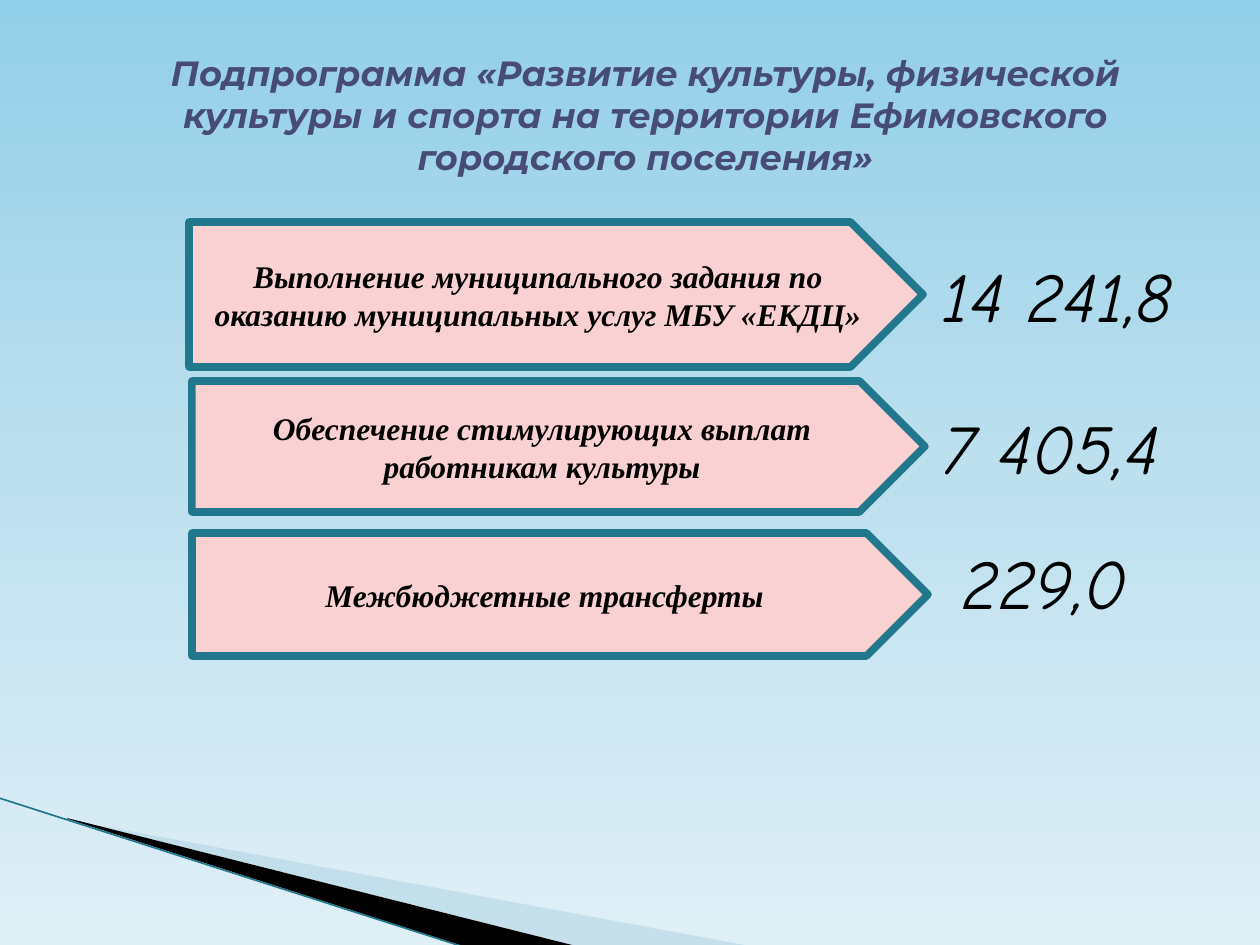
from copy import deepcopy

from lxml import etree
from pptx import Presentation
from pptx import util as u
from pptx.dml.color import RGBColor
from pptx.enum import shapes, text
from pptx.oxml.ns import qn

PX = 914400 / 126
SLIDE_SIZE = (1260, 945)

TITLE = ("Подпрограмма «Развитие культуры, физической культуры и спорта "
         "на территории Ефимовского городского поселения»")
TITLE_BOX = (105, 45, 1081, 140)

# (activity, arrow box, amount, amount box)
ACTIVITIES = [
    ("Выполнение муниципального задания по оказанию муниципальных услуг МБУ «ЕКДЦ»",
     (189, 222, 734, 145), "14 241,8", (930, 246, 329, 97)),
    ("Обеспечение стимулирующих выплат работникам культуры",
     (192, 381, 733, 131), "7 405,4", (930, 398, 289, 97)),
    ("Межбюджетные трансферты",
     (192, 533, 736, 123), "229,0", (950, 533, 248, 97)),
]

SKY = [(0, "92CFE8"), (0.5, "BDE0EF"), (1, "DFEFF6")]
PINK, TEAL, BLACK, VIOLET = "F9D1D3", "21788D", "000000", "474B78"

# (corner points, fill, opacity in percent)
WEDGES = [
    ([(69, 820), (750, 946), (575, 946), (69, 819)], "A0CBDC", 40),
    ([(67, 818), (576, 946), (469, 948), (68, 819)], BLACK, 100),
]
EDGE = (-1, 798, 467, 948)


def px(*lengths):
    return [round(length * PX) for length in lengths]


def rgb(value):
    return RGBColor.from_string(value)


def write(shape, content, *, font, size, color=BLACK, bold=False,
          align=text.PP_ALIGN.LEFT, anchor=text.MSO_ANCHOR.TOP):
    frame = shape.text_frame
    frame.word_wrap = True
    frame.auto_size = text.MSO_AUTO_SIZE.NONE
    frame.vertical_anchor = anchor
    paragraph = frame.paragraphs[0]
    paragraph.alignment = align
    run = paragraph.add_run()
    run.text = content
    run.font.name = font
    run.font.size = u.Pt(size)
    run.font.bold = bold
    run.font.italic = True
    run.font.color.rgb = rgb(color)


def paint_background(slide):
    fill = slide.background.fill
    fill.gradient()
    fill.gradient_angle = 270
    first = fill.gradient_stops
    stop_list = slide.background._cSld.find(".//" + qn("a:gsLst"))
    stop_list.insert(1, deepcopy(stop_list[0]))
    for stop, (position, color) in zip(fill.gradient_stops, SKY):
        stop.color.rgb = rgb(color)
        stop.position = position


def add_wedge(slide, points, color, opacity):
    builder = slide.shapes.build_freeform(*points[0], scale=PX)
    builder.add_line_segments(points[1:], close=True)
    wedge = builder.convert_to_shape()
    wedge.shadow.inherit = False
    wedge.line.fill.background()
    wedge.fill.solid()
    wedge.fill.fore_color.rgb = rgb(color)
    if opacity < 100:
        color_node = wedge._element.spPr.find(".//" + qn("a:srgbClr"))
        etree.SubElement(color_node, qn("a:alpha"), val=str(opacity * 1000))


def add_edge(slide):
    edge = slide.shapes.add_connector(shapes.MSO_CONNECTOR.STRAIGHT, *px(*EDGE))
    edge.line.color.rgb = rgb(TEAL)
    edge.line.width = u.Pt(0.95)
    etree.SubElement(edge._element.spPr, qn("a:effectLst"))


def add_activity(slide, activity, arrow_box, amount, amount_box):
    arrow = slide.shapes.add_shape(shapes.MSO_SHAPE.PENTAGON, *px(*arrow_box))
    arrow.shadow.inherit = False
    arrow.fill.solid()
    arrow.fill.fore_color.rgb = rgb(PINK)
    arrow.line.color.rgb = rgb(TEAL)
    arrow.line.width = u.Pt(4.33)
    etree.SubElement(arrow.line._get_or_add_ln(), qn("a:round"))
    write(arrow, activity, font="Times New Roman", size=18, bold=True,
          align=text.PP_ALIGN.CENTER, anchor=text.MSO_ANCHOR.MIDDLE)
    write(slide.shapes.add_textbox(*px(*amount_box)), amount,
          font="Comic Neue", size=40)


def main():
    deck = Presentation()
    deck.slide_width, deck.slide_height = px(*SLIDE_SIZE)
    slide = deck.slides.add_slide(deck.slide_layouts[5])
    paint_background(slide)
    for wedge in WEDGES:
        add_wedge(slide, *wedge)
    add_edge(slide)

    title = slide.shapes.title
    title.left, title.top, title.width, title.height = px(*TITLE_BOX)
    write(title, TITLE, font="Montserrat", size=20, color=VIOLET, bold=True,
          align=text.PP_ALIGN.CENTER)
    for row in ACTIVITIES:
        add_activity(slide, *row)
    deck.save("out.pptx")


if __name__ == "__main__":
    main()
